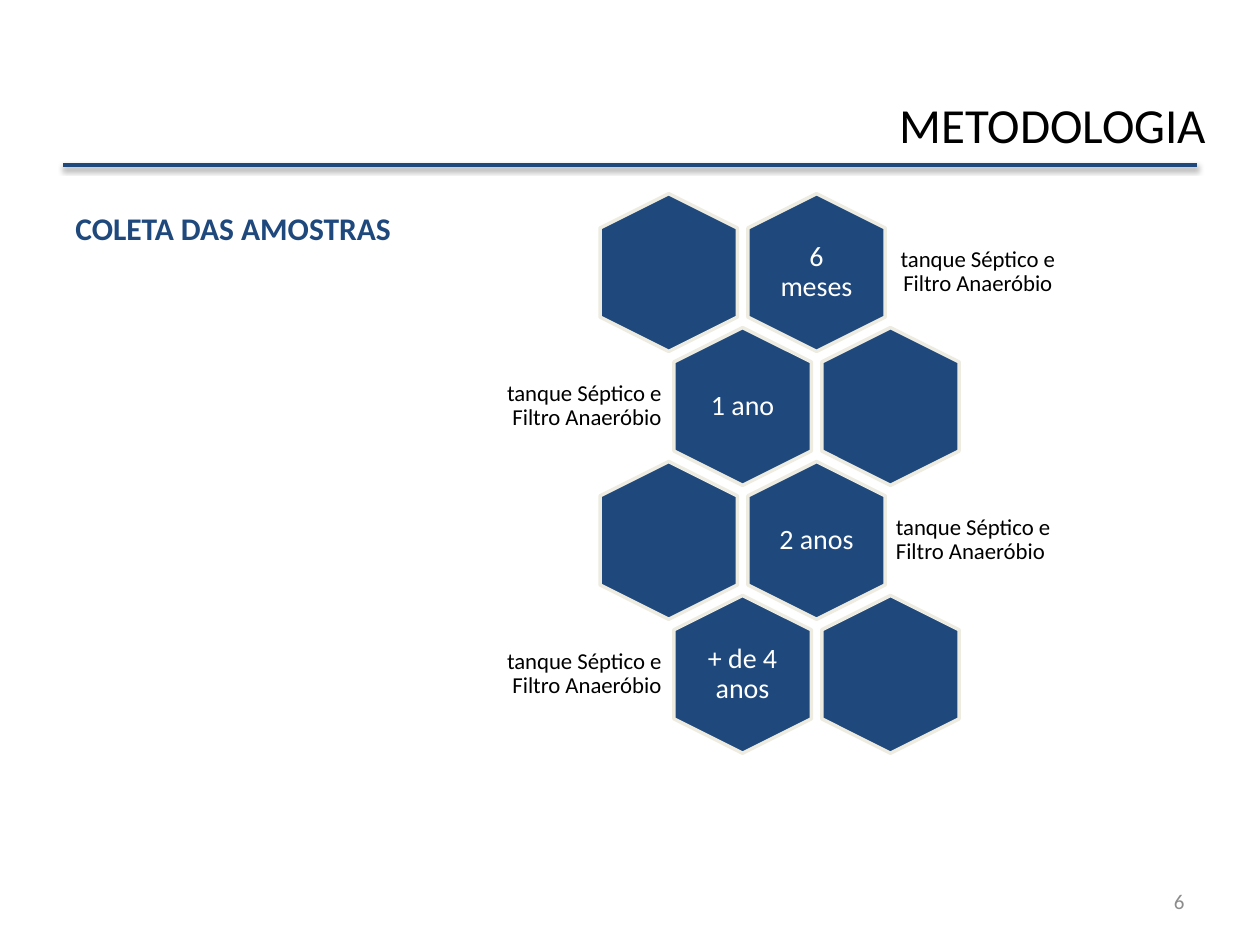
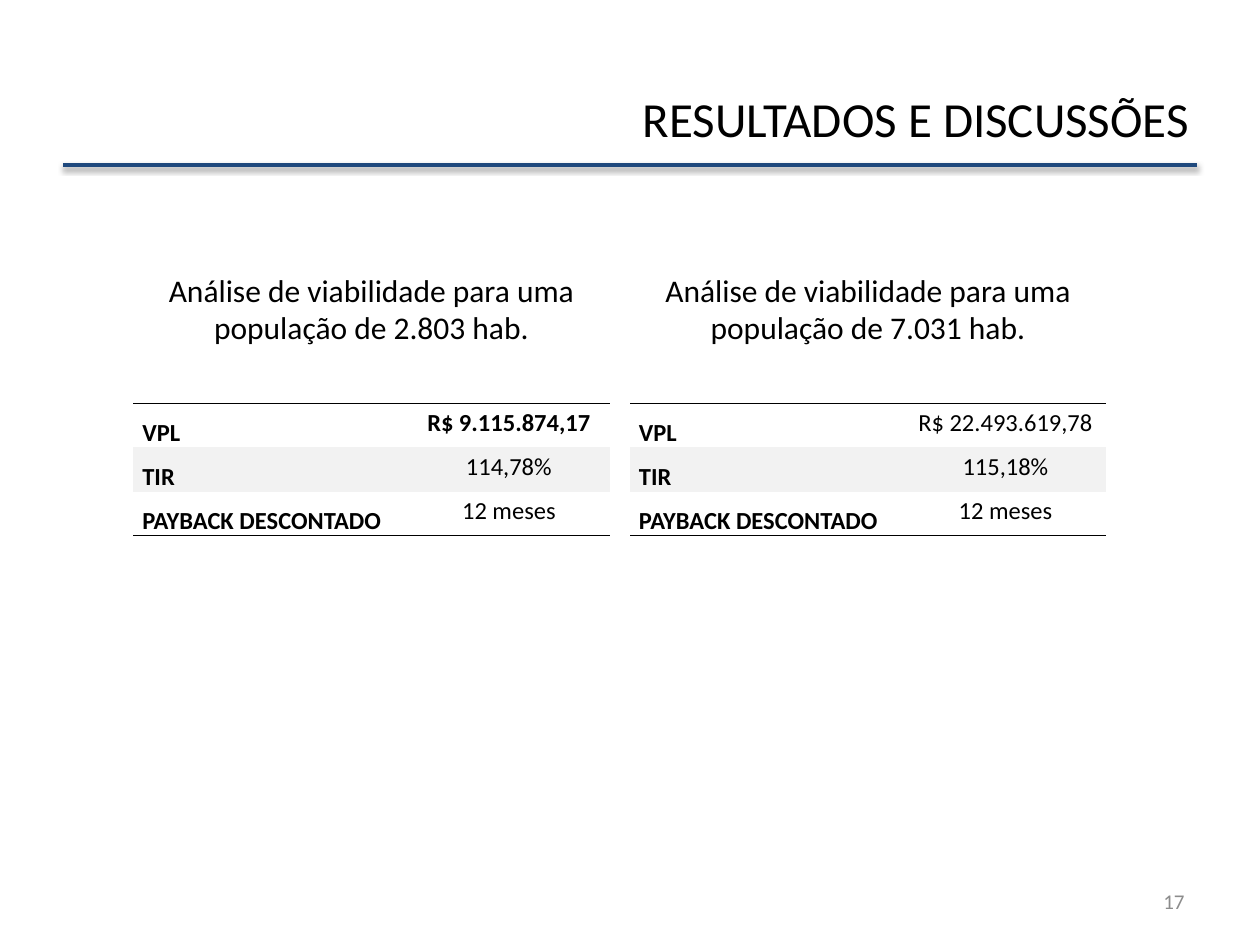
import dataclasses
import pptx
import pptx.util
import pptx.dml.color
import pptx.enum.shapes
import pptx.enum.text
import pptx.oxml
import pptx.oxml.ns

Cm, Pt = pptx.util.Cm, pptx.util.Pt
Align = pptx.enum.text.PP_ALIGN
Anchor = pptx.enum.text.MSO_ANCHOR
Kind = pptx.enum.shapes.MSO_SHAPE
Rgb = pptx.dml.color.RGBColor.from_string


@dataclasses.dataclass(frozen=True)
class Theme:
    font: str = "Calibri"
    blue: str = "1F497D"
    cream: str = "EEECE1"
    black: str = "000000"
    white: str = "FFFFFF"
    band: str = "F2F2F2"
    gray: str = "8C8C8C"
    title: int = 28
    head: int = 18
    hexa: int = 16
    cell: int = 14
    note: int = 13
    foot: int = 12


T = Theme()


def write(frame, text, size, color=T.black, bold=False, align=Align.LEFT,
          space=None):
    """Fill the first paragraph of a text frame."""
    para = frame.paragraphs[0]
    para.alignment = align
    para.line_spacing = space
    run = para.add_run()
    run.text = text
    run.font.name = T.font
    run.font.size = Pt(size)
    run.font.bold = bold
    run.font.color.rgb = Rgb(color)


def add_text(slide, box, text, size, inset=None, anchor=Anchor.MIDDLE, **style):
    """Add a wrapping text box; box and inset are in centimetres."""
    frame = slide.shapes.add_textbox(*map(Cm, box)).text_frame
    frame.word_wrap = True
    frame.vertical_anchor = anchor
    if inset is not None:
        frame.margin_left = frame.margin_right = Cm(inset)
        frame.margin_top = frame.margin_bottom = Cm(inset)
    write(frame, text, size, **style)


def add_rule(slide, left, top, width):
    """Draw the title rule with its soft shadow below."""
    rule = slide.shapes.add_connector(
        pptx.enum.shapes.MSO_CONNECTOR.STRAIGHT,
        Cm(left), Cm(top), Cm(left + width), Cm(top))
    rule.line.color.rgb = Rgb(T.blue)
    rule.line.width = Pt(2)
    rule._element.spPr.append(pptx.oxml.parse_xml(
        f'<a:effectLst {pptx.oxml.ns.nsdecls("a")}>'
        f'<a:outerShdw blurRad="{Pt(3.1)}" dist="{Pt(1.6)}" dir="5400000" '
        f'rotWithShape="0"><a:srgbClr val="{T.black}"><a:alpha val="38000"/>'
        '</a:srgbClr></a:outerShdw></a:effectLst>'))


def add_page(deck, title, spot, number):
    """Add a slide with title, rule and page number; spot is the title corner."""
    slide = deck.slides.add_slide(deck.slide_layouts[6])
    add_text(slide, (18.21, 17.65, 5.92, 1.02), str(number), T.foot,
             color=T.gray, align=Align.RIGHT)
    add_text(slide, (*spot, 22.86, 3.18), title, T.title, align=Align.RIGHT)
    add_rule(slide, 1.27, 3.33, 22.86)
    return slide


def add_hex(slide, left, top, label):
    """Add an upright hexagon, turned a quarter, with a level label if any."""
    width, height = 3.18, 2.77
    cell = slide.shapes.add_shape(
        Kind.HEXAGON, Cm(left), Cm(top), Cm(width), Cm(height))
    cell.rotation = 90
    cell.shadow.inherit = False
    cell.fill.solid()
    cell.fill.fore_color.rgb = Rgb(T.blue)
    cell.line.color.rgb = Rgb(T.cream)
    cell.line.width = Pt(2)
    if label:
        wide, high = 1.9, 2.18
        box = left + (width - wide) / 2, top + (height - high) / 2, wide, high
        add_text(slide, box, label, T.hexa, inset=0.18, color=T.white,
                 align=Align.CENTER, space=0.9)


def add_comb(slide, left, top, steps):
    """Stack rows of two hexagons, with captions on alternate sides."""
    pitch, drop = 2.98, 2.7
    for row, (label, note, align) in enumerate(steps):
        odd = row % 2
        x, y = left + odd * pitch / 2, top + row * drop
        for col in range(2):
            add_hex(slide, x + col * pitch, y, label if col != odd else None)
        start, width = (-1.86, 3.43) if odd else (6.04, 3.56)
        add_text(slide, (left + start, y + 0.43, width, 1.9), note, T.note,
                 inset=0.13, align=align, space=0.9)


def set_edge(cell, side, shown):
    paint = (f'<a:solidFill><a:srgbClr val="{T.black}"/></a:solidFill>'
             if shown else '<a:noFill/>')
    cell._tc.get_or_add_tcPr().append(pptx.oxml.parse_xml(
        f'<a:{side} {pptx.oxml.ns.nsdecls("a")} w="{Pt(1)}">{paint}</a:{side}>'))


def add_grid(slide, left, top, rows, strong):
    """Add a two-column table; strong is the set of rows with a bold value."""
    widths, high = (5.54, 4.06), 0.87
    grid = slide.shapes.add_table(
        len(rows), 2, Cm(left), Cm(top), Cm(sum(widths)),
        Cm(high * len(rows))).table
    grid.first_row = grid.horz_banding = False
    for col, width in zip(grid.columns, widths):
        col.width = Cm(width)
    for r, row in enumerate(rows):
        for c, text in enumerate(row):
            cell = grid.cell(r, c)
            cell.margin_left = cell.margin_right = Cm(0.18)
            cell.margin_top = cell.margin_bottom = 0
            for side in ("lnL", "lnR", "lnT", "lnB"):
                set_edge(cell, side, (side, r) in
                         (("lnT", 0), ("lnB", len(rows) - 1)))
            cell.fill.solid()
            cell.fill.fore_color.rgb = Rgb(T.band if r % 2 else T.white)
            write(cell.text_frame, text, T.cell, bold=c == 0 or r in strong,
                  align=Align.CENTER if c else Align.JUSTIFY,
                  space=1.15 if c else 1.5)


def add_case(slide, left, top, people, worth, rate, strong=()):
    """Add one viability study: heading above its table."""
    add_text(slide, (left, top, 9.6, 1.8),
             f"Análise de viabilidade para uma população de {people} hab.",
             T.head, anchor=Anchor.TOP, align=Align.CENTER)
    rows = (("VPL", worth), ("TIR", rate), ("PAYBACK DESCONTADO", "12 meses"))
    add_grid(slide, left, top + 2.8, rows, strong)


def add_method(deck):
    slide = add_page(deck, "METODOLOGIA", (1.7, 0.91), 6)
    note = "tanque Séptico e Filtro Anaeróbio"
    add_comb(slide, 11.89, 4.11, (
        ("6 meses", note, Align.CENTER),
        ("1 ano", note, Align.RIGHT),
        ("2 anos", note, Align.LEFT),
        ("+ de 4 anos", note, Align.RIGHT)))
    add_text(slide, (1.27, 4.09, 7.39, 1.02), "COLETA DAS AMOSTRAS", T.head,
             anchor=Anchor.TOP, color=T.blue, bold=True)


def add_results(deck):
    slide = add_page(deck, "RESULTADOS E DISCUSSÕES", (1.35, 0.79), 17)
    add_case(slide, 2.69, 5.33, "2.803", "R$ 9.115.874,17", "114,78%",
             strong=(0,))
    add_case(slide, 12.7, 5.33, "7.031", "R$ 22.493.619,78", "115,18%")


def main():
    deck = pptx.Presentation()
    deck.slide_width, deck.slide_height = Cm(25.4), Cm(19.05)
    add_method(deck)
    add_results(deck)
    deck.save("out.pptx")


if __name__ == "__main__":
    main()
